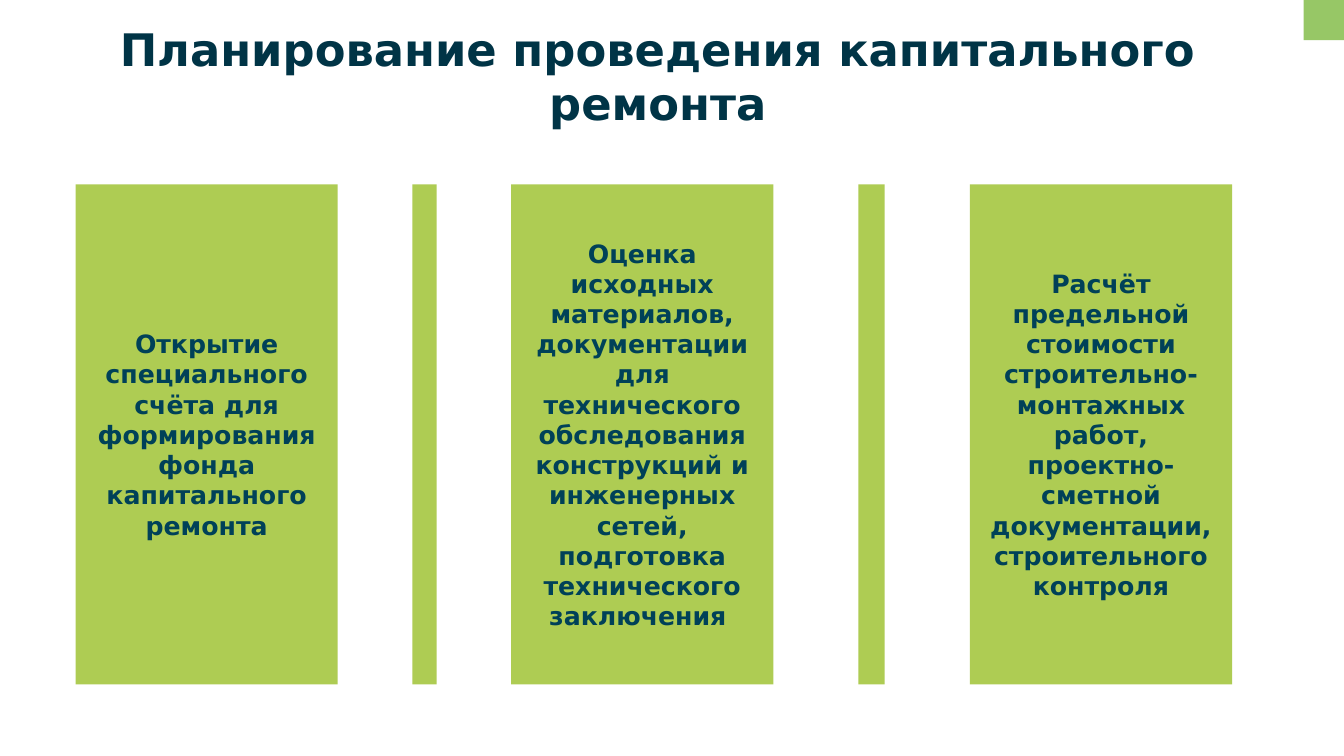
from pptx import Presentation
from pptx.dml.color import RGBColor
from pptx.enum.shapes import MSO_SHAPE
from pptx.enum.text import MSO_ANCHOR, PP_ALIGN
from pptx.util import Inches, Pt

TITLE = "Планирование проведения капитального ремонта"
# Left edge in inches and text of each stage
STAGES = [
    (0.75, "Открытие специального счёта для формирования фонда капитального ремонта"),
    (5.07, "Оценка исходных материалов, документации для технического обследования "
           "конструкций и инженерных сетей, подготовка технического заключения "),
    (9.62, "Расчёт предельной стоимости строительно-монтажных работ, "
           "проектно-сметной документации, строительного контроля"),
]
DIVIDER_WIDTHS = [0.24, 0.26]

FONT = "DejaVu Sans"
TITLE_COLOR, TEXT_COLOR = "003446", "004158"
CARD_COLOR, CORNER_COLOR = "AECC53", "97C766"
SLIDE_WIDTH, SLIDE_HEIGHT = 13.33, 7.5
CARD_TOP, CARD_WIDTH, CARD_HEIGHT = 1.83, 2.6, 4.96
CORNER_SIZE = 0.4


def color(value):
    return RGBColor.from_string(value)


def write(shape, text, size, text_color, anchor=MSO_ANCHOR.MIDDLE):
    frame = shape.text_frame
    frame.word_wrap = True
    frame.vertical_anchor = anchor
    paragraph = frame.paragraphs[0]
    paragraph.alignment = PP_ALIGN.CENTER
    run = paragraph.add_run()
    run.text = text
    run.font.name = FONT
    run.font.size = Pt(size)
    run.font.bold = True
    run.font.color.rgb = color(text_color)


def add_block(slide, left, top, width, height, fill):
    shape = slide.shapes.add_shape(
        MSO_SHAPE.RECTANGLE, *map(Inches, (left, top, width, height)))
    shape.shadow.inherit = False
    shape.fill.solid()
    shape.fill.fore_color.rgb = color(fill)
    shape.line.fill.background()
    return shape


presentation = Presentation()
presentation.slide_width = Inches(SLIDE_WIDTH)
presentation.slide_height = Inches(SLIDE_HEIGHT)
slide = presentation.slides.add_slide(presentation.slide_layouts[5])

# Title
title = slide.shapes.title
title.left, title.top, title.width, title.height = map(Inches, (0.14, 0.14, 12.77, 2.54))
frame = title.text_frame
frame.margin_left = frame.margin_right = frame.margin_top = frame.margin_bottom = Inches(0.08)
write(title, TITLE, 32, TITLE_COLOR, anchor=MSO_ANCHOR.TOP)

# Corner accent
add_block(slide, SLIDE_WIDTH - CORNER_SIZE, 0, CORNER_SIZE, CORNER_SIZE, CORNER_COLOR)

# Stage cards
for left, text in STAGES:
    card = add_block(slide, left, CARD_TOP, CARD_WIDTH, CARD_HEIGHT, CARD_COLOR)
    write(card, text, 18, TEXT_COLOR)

# Dividers centred in the gaps between cards
for (left, _), (next_left, _), width in zip(STAGES, STAGES[1:], DIVIDER_WIDTHS):
    gap_center = (left + CARD_WIDTH + next_left) / 2
    add_block(slide, gap_center - width / 2, CARD_TOP, width, CARD_HEIGHT, CARD_COLOR)

presentation.save("out.pptx")
